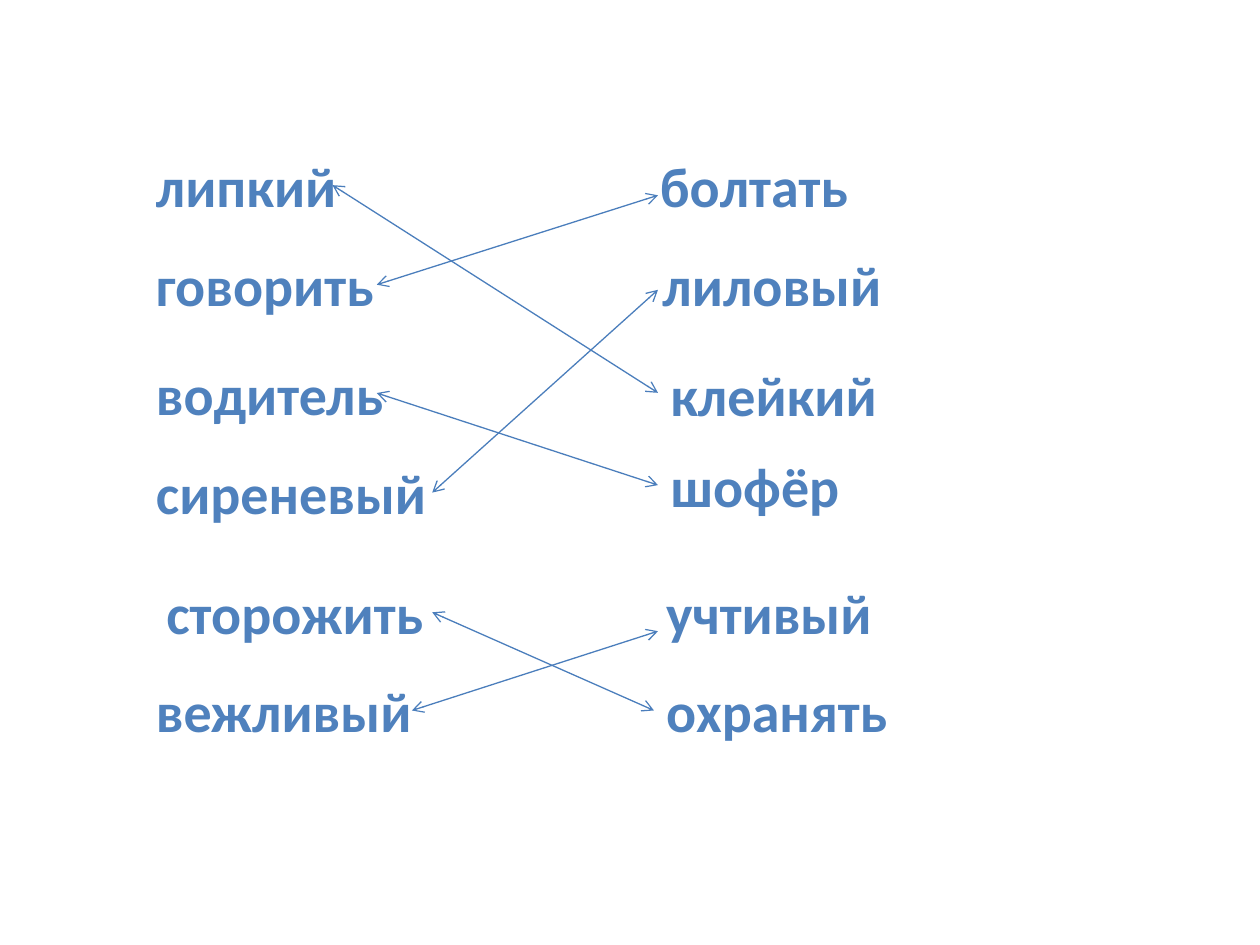
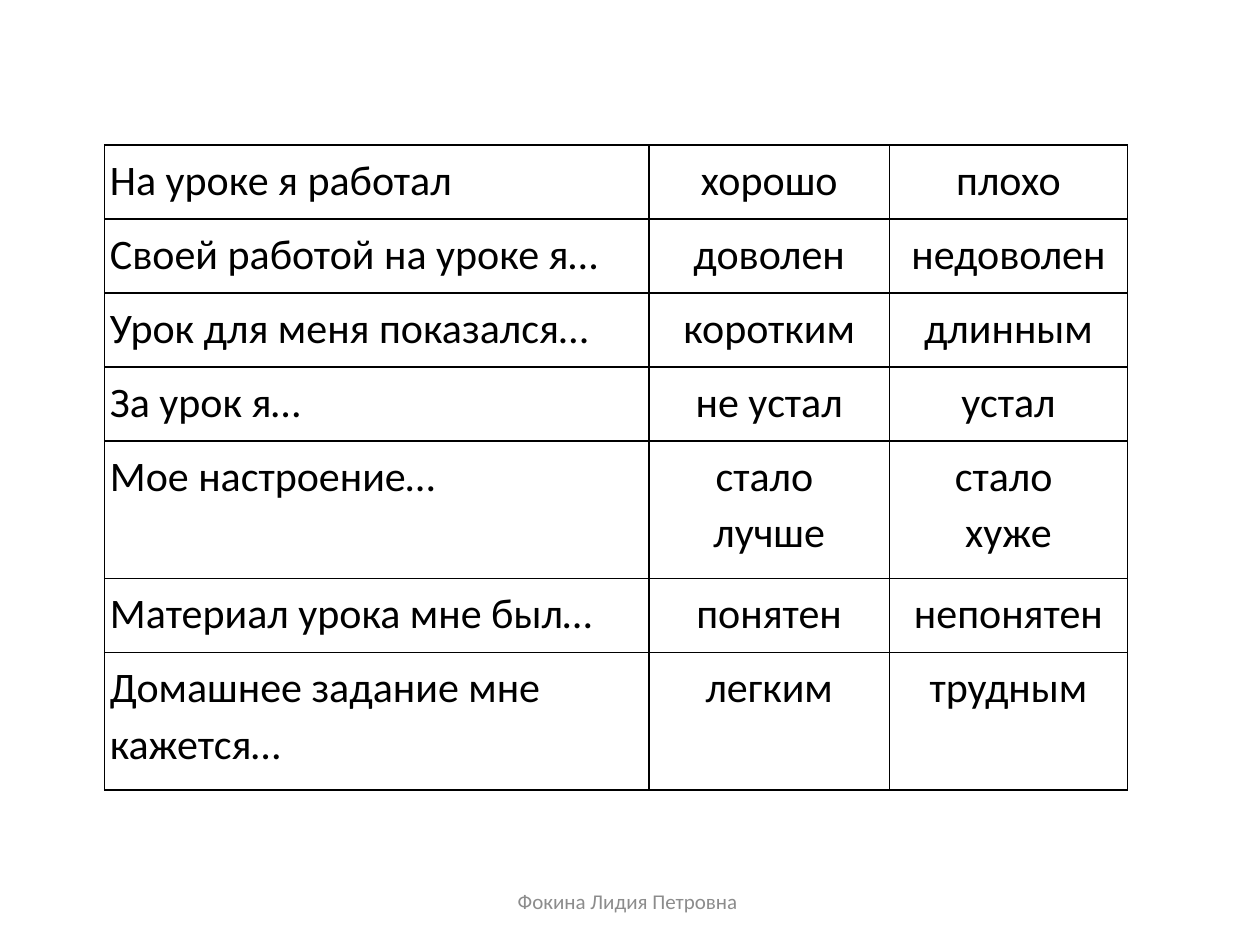
from lxml import etree
from pptx import Presentation
from pptx.dml.color import RGBColor
from pptx.enum import shapes, text
from pptx.oxml import ns
from pptx.util import Pt

FONT = "Calibri"
WORD_BLUE = RGBColor(0x4F, 0x81, 0xBD)
ARROW_BLUE = RGBColor(0x4B, 0x7E, 0xBC)
FOOTER_GREY = RGBColor(0x8C, 0x8C, 0x8C)
BLACK = RGBColor(0, 0, 0)

WORD_HEIGHT = 46

# word, left, top, width
LEFT_WORDS = [
    ("липкий", 82, 82.8, 204),
    ("говорить", 82, 139.7, 215),
    ("водитель", 82, 201.6, 215),
    ("сиреневый", 82, 258.5, 249),
    ("сторожить", 88, 326.9, 255),
    ("вежливый", 82, 383, 261),
]
RIGHT_WORDS = [
    ("болтать", 370, 82.8, 227),
    ("лиловый", 371.5, 139.7, 227),
    ("клейкий", 376, 202.3, 238),
    ("шофёр", 376, 254.2, 193),
    ("учтивый", 373.5, 326.9, 193),
    ("охранять", 373.5, 383, 193),
]
# start x, end x and end y for each left word; it starts at the word's mid-height
SYNONYM_ARROWS = [
    (190, 376, 224.5),
    (215.3, 376, 111.6),
    (215.3, 376, 277.2),
    (247, 376, 165.6),
    (247, 373.7, 406),
    (235.4, 376, 360.7),
]

COLUMN_WIDTHS = [311, 137.5, 136]
ONE_LINE, TWO_LINES = 42.3, 78.6
REFLECTION = [
    (ONE_LINE, "На уроке я работал", "хорошо", "плохо"),
    (ONE_LINE, "Своей работой на уроке я…", "доволен", "недоволен"),
    (ONE_LINE, "Урок для меня показался…", "коротким", "длинным"),
    (ONE_LINE, "За урок я…", "не устал", "устал"),
    (TWO_LINES, "Мое настроение…", "стало \nлучше", "стало \nхуже"),
    (ONE_LINE, "Материал урока мне был…", "понятен", "непонятен"),
    (TWO_LINES, "Домашнее задание мне кажется…", "легким", "трудным"),
]


def add_span(para, words, size, color, bold=False):
    span = para.add_run()
    span.text = words
    span.font.name = FONT
    span.font.size = Pt(size)
    span.font.bold = bold
    span.font.color.rgb = color


def add_text(page, words, left, top, width, height, size, color, bold=False):
    box = page.shapes.add_textbox(Pt(left), Pt(top), Pt(width), Pt(height))
    box.text_frame.word_wrap = True
    add_span(box.text_frame.paragraphs[0], words, size, color, bold)
    return box


def add_word(page, word, left, top, width):
    add_text(page, word, left, top, width, WORD_HEIGHT, 32, WORD_BLUE, bold=True)


def add_double_arrow(page, x1, y1, x2, y2):
    arrow = page.shapes.add_connector(
        shapes.MSO_CONNECTOR.STRAIGHT, Pt(x1), Pt(y1), Pt(x2), Pt(y2))
    arrow.line.color.rgb = ARROW_BLUE
    arrow.line.width = Pt(0.75)
    line = arrow.line._get_or_add_ln()
    for end in ("a:headEnd", "a:tailEnd"):
        etree.SubElement(line, ns.qn(end), type="arrow")
    etree.SubElement(arrow._element.spPr, ns.qn("a:effectLst"))


def add_borders(cell, width=1):
    """Draw all four edges of a table cell in black."""
    properties = cell._tc.get_or_add_tcPr()
    for place, edge in enumerate(("a:lnL", "a:lnR", "a:lnT", "a:lnB")):
        line = etree.Element(ns.qn(edge), w=str(Pt(width)))
        fill = etree.SubElement(line, ns.qn("a:solidFill"))
        etree.SubElement(fill, ns.qn("a:srgbClr"), val=str(BLACK))
        properties.insert(place, line)


def fill_cell(cell, words, align):
    cell.fill.background()
    cell.margin_left = cell.margin_right = Pt(3)
    cell.margin_top = cell.margin_bottom = Pt(3)
    frame = cell.text_frame
    for number, line in enumerate(words.split("\n")):
        para = frame.add_paragraph() if number else frame.paragraphs[0]
        para.alignment = align
        para.line_spacing = 1.1
        add_span(para, line, 24, BLACK)
    add_borders(cell)


def add_reflection_table(page, left, top):
    height = sum(row[0] for row in REFLECTION)
    table = page.shapes.add_table(
        len(REFLECTION), len(COLUMN_WIDTHS), Pt(left), Pt(top),
        Pt(sum(COLUMN_WIDTHS)), Pt(height)).table
    table.first_row = table.horz_banding = False
    for column, width in zip(table.columns, COLUMN_WIDTHS):
        column.width = Pt(width)
    for row, (row_height, *entries) in zip(table.rows, REFLECTION):
        row.height = Pt(row_height)
        for number, (cell, words) in enumerate(zip(row.cells, entries)):
            align = text.PP_ALIGN.CENTER if number else text.PP_ALIGN.LEFT
            fill_cell(cell, words, align)


def add_footer(page, words):
    box = add_text(page, words, 246, 500.5, 228, 28.75, 12, FOOTER_GREY)
    box.text_frame.vertical_anchor = text.MSO_ANCHOR.MIDDLE
    box.text_frame.paragraphs[0].alignment = text.PP_ALIGN.CENTER


def build_synonyms(page):
    for word in LEFT_WORDS + RIGHT_WORDS:
        add_word(page, *word)
    for (_, _, top, _), (x1, x2, y2) in zip(LEFT_WORDS, SYNONYM_ARROWS):
        add_double_arrow(page, x1, top + WORD_HEIGHT / 2, x2, y2)


def build_reflection(page):
    add_footer(page, "Фокина Лидия Петровна ")
    add_reflection_table(page, 59.8, 82.8)


def main():
    deck = Presentation()
    deck.slide_width, deck.slide_height = Pt(720), Pt(540)
    for build in (build_synonyms, build_reflection):
        build(deck.slides.add_slide(deck.slide_layouts[6]))
    deck.save("out.pptx")


if __name__ == "__main__":
    main()
